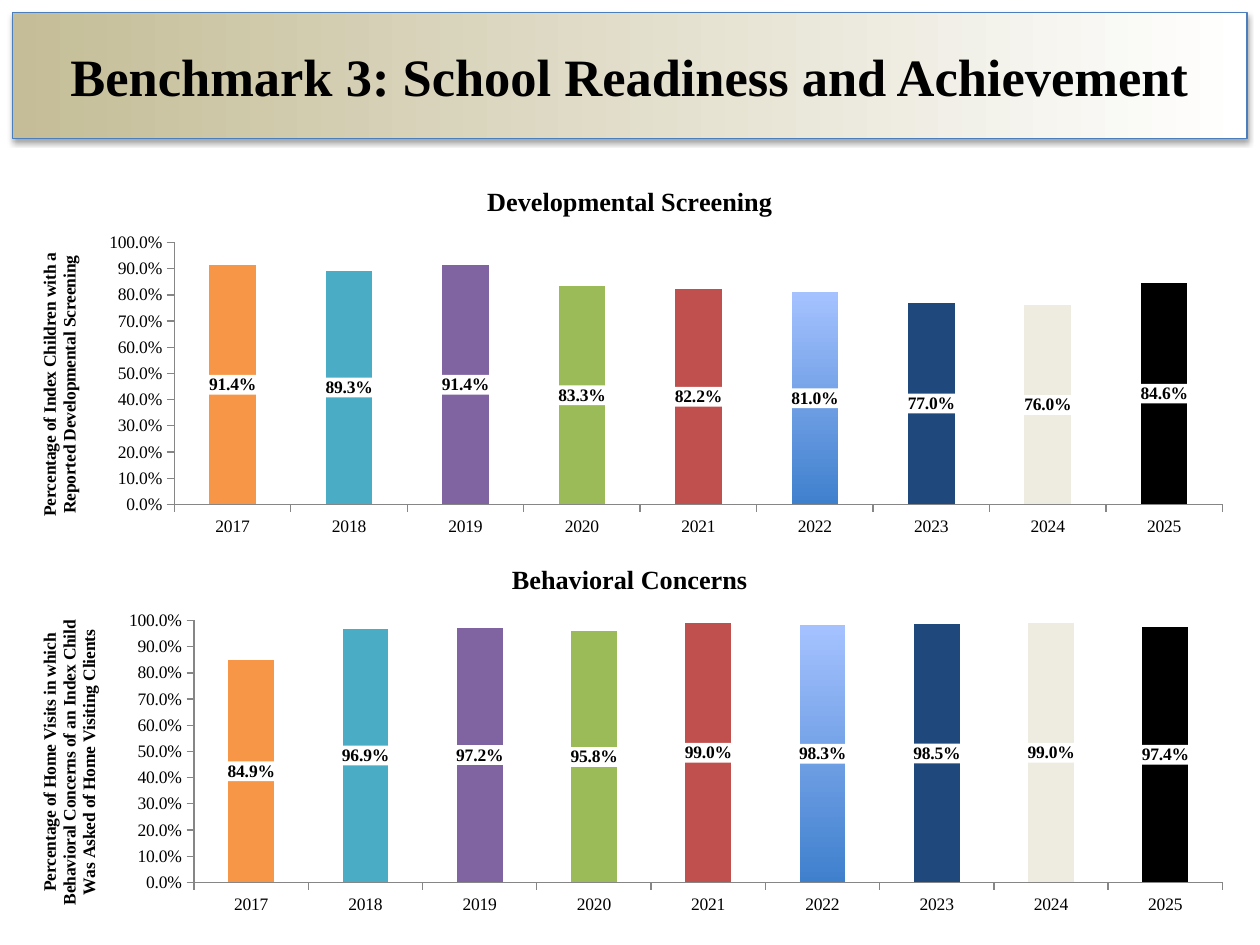
from dataclasses import dataclass

import pptx
import pptx.chart.data
import pptx.dml.color
import pptx.enum.chart
import pptx.enum.shapes
import pptx.enum.text
import pptx.oxml
import pptx.oxml.ns
import pptx.util
from pptx.util import Cm, Pt

RGB = pptx.dml.color.RGBColor
BLACK = RGB(0x00, 0x00, 0x00)
WHITE = RGB(0xFF, 0xFF, 0xFF)
TAN = RGB(0xC4, 0xBD, 0x97)
BANNER_EDGE = RGB(0x4B, 0x7E, 0xBC)
AXIS_GRAY = RGB(0x86, 0x86, 0x86)
SERIES_BLUE = RGB(0x4F, 0x81, 0xBD)
DEEP_BLUE = RGB(0x3F, 0x80, 0xCD)
PALE_BLUE = RGB(0xA5, 0xC2, 0xFF)
# One colour per year; None marks the year with the blue gradient
YEAR_COLORS = [
    RGB(0xF7, 0x96, 0x46), RGB(0x4B, 0xAC, 0xC6), RGB(0x80, 0x64, 0xA2),
    RGB(0x9B, 0xBB, 0x59), RGB(0xC0, 0x50, 0x4D), None,
    RGB(0x1F, 0x49, 0x7D), RGB(0xEE, 0xEC, 0xE1), BLACK,
]
YEARS = [str(year) for year in range(2017, 2026)]
SERIF = "Times New Roman"
PERCENT = "0.0%"
LEFT, WIDTH = Cm(0.25), Cm(24.89)
BANNER_HEIGHT, CHART_HEIGHT = Cm(2.54), Cm(7.62)
FIRST_CHART_TOP = Cm(3.35)


@dataclass
class Measure:
    title: str
    axis_title: str
    rates: list[float]


MEASURES = [
    Measure("Developmental Screening",
            "Percentage of Index Children with a Reported Developmental Screening",
            [0.914, 0.893, 0.914, 0.833, 0.822, 0.81, 0.77, 0.76, 0.846]),
    Measure("Behavioral Concerns",
            "Percentage of Home Visits in which Behavioral Concerns of an "
            "Index Child Was Asked of Home Visiting Clients",
            [0.849, 0.969, 0.972, 0.958, 0.99, 0.983, 0.985, 0.99, 0.974]),
]


def style_font(font, size: float, bold: bool = False, name: str = SERIF) -> None:
    font.name = name
    font.size = Pt(size)
    font.bold = bold
    font.color.rgb = BLACK


def add_run(frame, text: str, size: float) -> None:
    run = frame.paragraphs[0].add_run()
    run.text = text
    style_font(run.font, size, bold=True)


def fill_gradient(fill, start: RGB, end: RGB, angle: float) -> None:
    fill.gradient()
    fill.gradient_angle = angle
    for stop, color in zip(fill.gradient_stops, (start, end)):
        stop.color.rgb = color


def add_banner(slide, text: str) -> None:
    banner = slide.shapes.add_shape(
        pptx.enum.shapes.MSO_SHAPE.RECTANGLE, LEFT, LEFT, WIDTH, BANNER_HEIGHT)
    fill_gradient(banner.fill, TAN, WHITE, 0)
    banner.line.color.rgb = BANNER_EDGE
    banner.line.width = Pt(0.75)

    # Soft shadow straight below the banner
    banner.shadow.inherit = False
    effects = banner.element.spPr.find(pptx.oxml.ns.qn("a:effectLst"))
    effects.append(pptx.oxml.parse_xml(
        f'<a:outerShdw {pptx.oxml.ns.nsdecls("a")} blurRad="{Pt(3.1)}" '
        f'dist="{Pt(1.8)}" dir="5400000" rotWithShape="0">'
        '<a:srgbClr val="000000"><a:alpha val="35000"/></a:srgbClr></a:outerShdw>'))

    # Title in front of the banner
    heading = slide.shapes.title
    heading.left, heading.top = LEFT, LEFT
    heading.width, heading.height = WIDTH, BANNER_HEIGHT
    heading.text_frame.word_wrap = True
    heading.text_frame.vertical_anchor = pptx.enum.text.MSO_ANCHOR.MIDDLE
    heading.text_frame.paragraphs[0].alignment = pptx.enum.text.PP_ALIGN.CENTER
    add_run(heading.text_frame, text, 30)
    heading.element.addprevious(banner.element)


def style_axis(axis) -> None:
    axis.has_major_gridlines = False
    axis.major_tick_mark = pptx.enum.chart.XL_TICK_MARK.OUTSIDE
    axis.minor_tick_mark = pptx.enum.chart.XL_TICK_MARK.NONE
    axis.format.line.color.rgb = AXIS_GRAY
    axis.format.line.width = Pt(0.75)
    style_font(axis.tick_labels.font, 10)


def style_value_axis(axis, title: str) -> None:
    style_axis(axis)
    axis.minimum_scale, axis.maximum_scale, axis.major_unit = 0, 1, 0.1
    axis.tick_labels.number_format = PERCENT
    axis.tick_labels.number_format_is_linked = False
    axis.has_title = True
    frame = axis.axis_title.text_frame
    add_run(frame, title, 10)
    # Read the axis title from bottom to top
    body = axis.axis_title.element.find(".//" + pptx.oxml.ns.qn("a:bodyPr")) \
        if hasattr(axis.axis_title, "element") else frame._txBody.bodyPr
    body.set("rot", "-5400000")
    body.set("vert", "horz")


def style_columns(series) -> None:
    series.format.fill.solid()
    series.format.fill.fore_color.rgb = SERIES_BLUE
    for index, color in enumerate(YEAR_COLORS):
        fill = series.points[index].format.fill
        if color is None:
            fill_gradient(fill, DEEP_BLUE, PALE_BLUE, 90)
        else:
            fill.solid()
            fill.fore_color.rgb = color


def add_labels(chart, series) -> None:
    labels = series.data_labels
    labels.show_value = True
    labels.number_format = PERCENT
    labels.number_format_is_linked = False
    labels.position = pptx.enum.chart.XL_LABEL_POSITION.CENTER
    style_font(labels.font, 10, bold=True)
    # White plate behind each label
    qn = pptx.oxml.ns.qn
    text_style = chart.element.find(f".//{qn('c:ser')}/{qn('c:dLbls')}/{qn('c:txPr')}")
    text_style.addprevious(pptx.oxml.parse_xml(
        f'<c:spPr {pptx.oxml.ns.nsdecls("c", "a")}><a:solidFill>'
        f'<a:srgbClr val="{WHITE}"/></a:solidFill></c:spPr>'))


def add_measure_chart(slide, measure: Measure, top: int) -> None:
    rates = pptx.chart.data.CategoryChartData(number_format=PERCENT)
    rates.categories = YEARS
    rates.add_series("Series 1", measure.rates)
    chart = slide.shapes.add_chart(
        pptx.enum.chart.XL_CHART_TYPE.COLUMN_CLUSTERED,
        LEFT, top, WIDTH, CHART_HEIGHT, rates).chart
    style_font(chart.font, 10, name="Calibri")
    chart.has_legend = False
    chart.has_title = True
    add_run(chart.chart_title.text_frame, measure.title, 15)
    style_axis(chart.category_axis)
    style_value_axis(chart.value_axis, measure.axis_title)

    plot = chart.plots[0]
    plot.gap_width = 150
    plot.vary_by_categories = False
    style_columns(plot.series[0])
    add_labels(chart, plot.series[0])


if __name__ == "__main__":
    deck = pptx.Presentation()
    deck.slide_width, deck.slide_height = Cm(25.4), Cm(19.05)
    readiness = deck.slides.add_slide(deck.slide_layouts[5])
    add_banner(readiness, "Benchmark 3: School Readiness and Achievement")
    for row, measure in enumerate(MEASURES):
        add_measure_chart(readiness, measure, FIRST_CHART_TOP + row * CHART_HEIGHT)
    deck.save("out.pptx")
